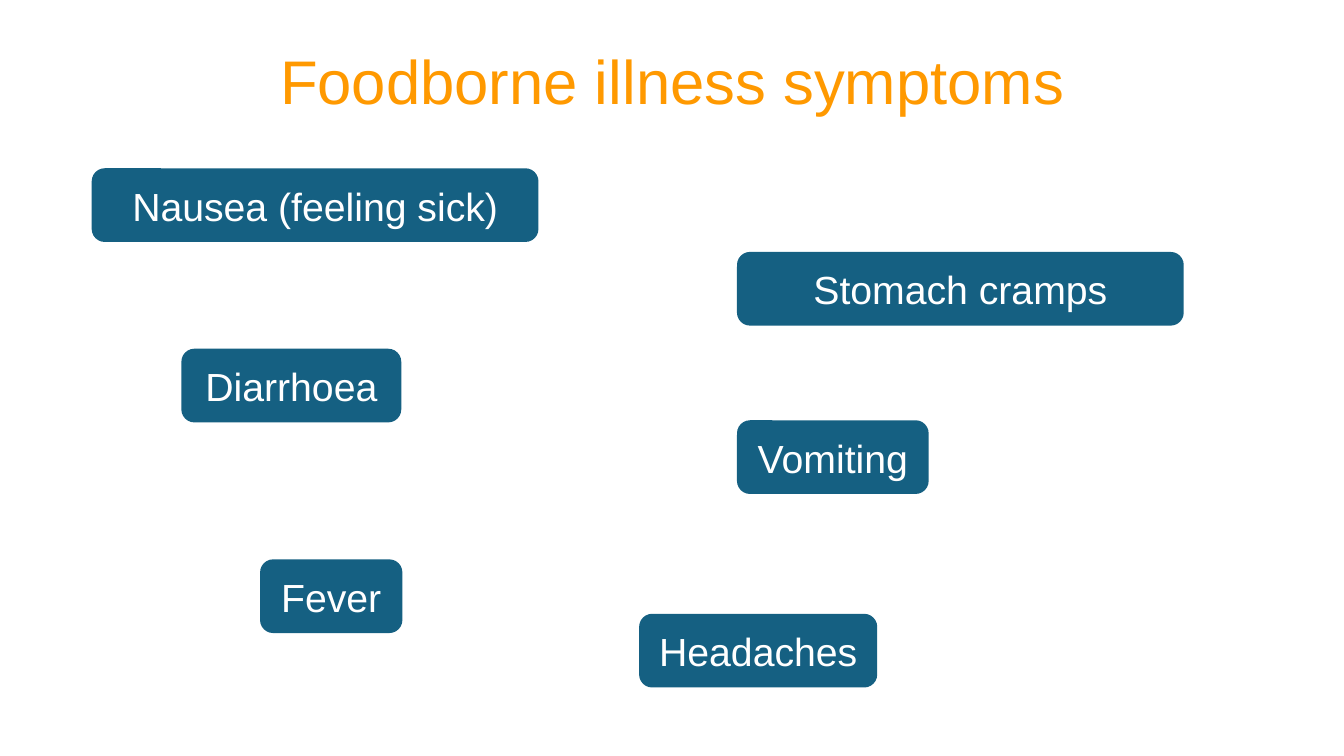
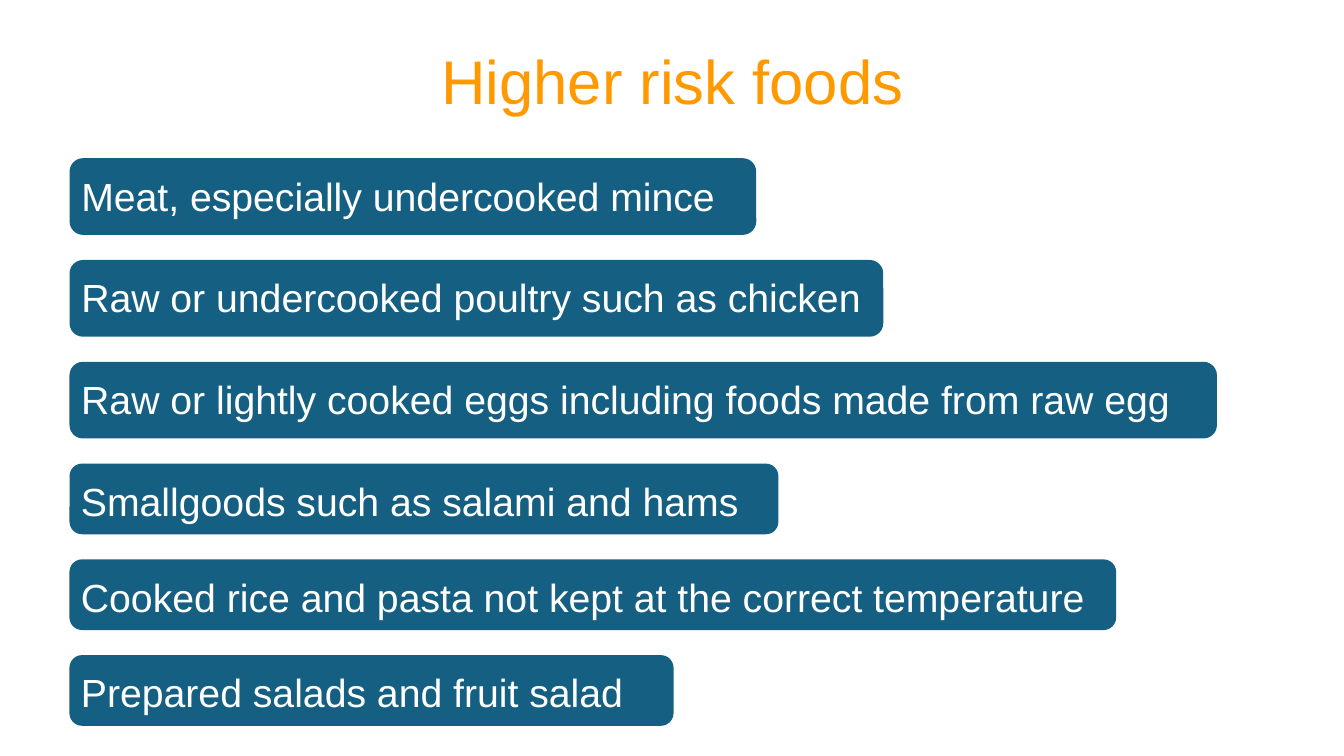
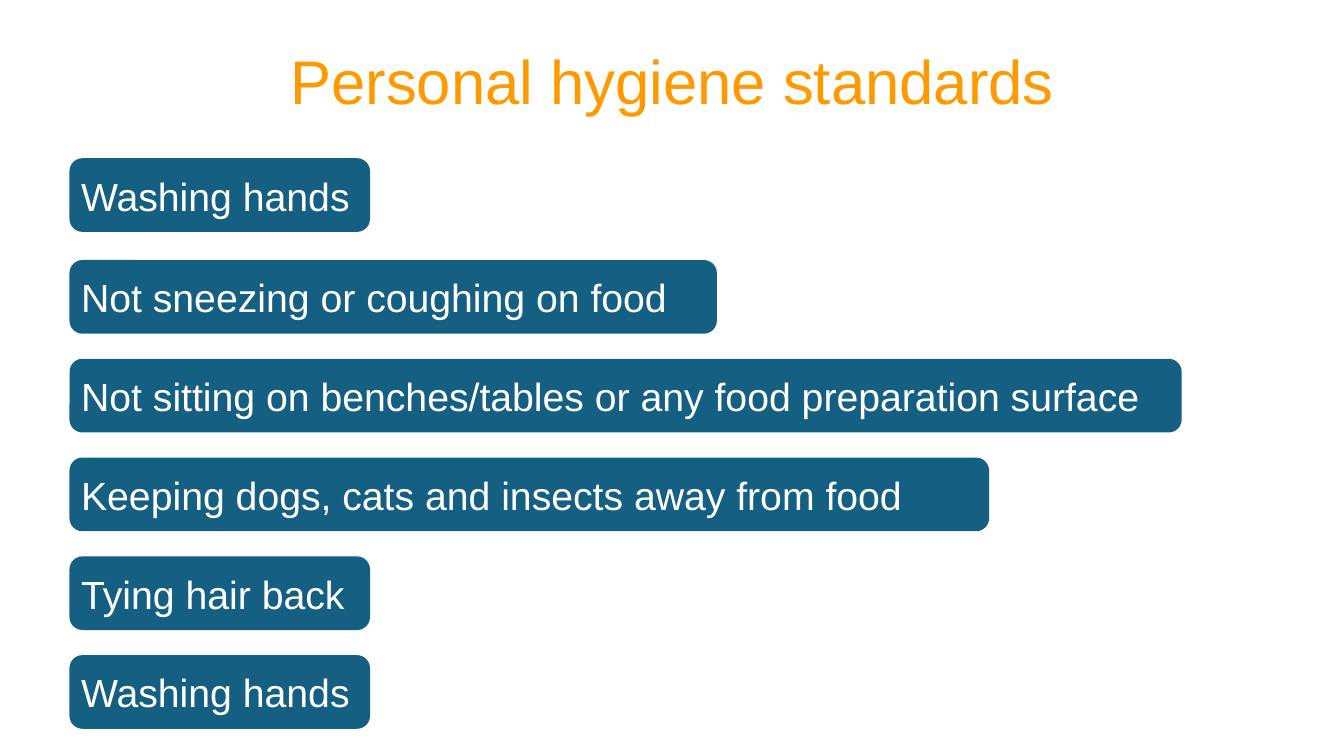
from pptx import Presentation
from pptx import util as u
from pptx.dml.color import RGBColor
from pptx.enum import shapes, text

ORANGE = RGBColor(0xFF, 0x99, 0x00)
TEAL = RGBColor(0x15, 0x60, 0x82)
WHITE = RGBColor(0xFF, 0xFF, 0xFF)
FONT = "Arial"

SLIDE_SIZE = (13.33, 7.5)
TITLE_BOX = (0.92, 0.11, 11.5, 1.45)
TITLE_ONLY = 5
LABEL_HEIGHT = 0.71
LIST_LEFT, LIST_TOP = 0.7, 1.58
LIST_GAP = 0.27

SYMPTOMS = [
    ("Nausea (feeling sick)", 0.92, 1.68, 4.41),
    ("Stomach cramps", 7.32, 2.51, 4.41),
    ("Diarrhoea", 1.81, 3.47, 2.16),
    ("Vomiting", 7.32, 4.18, 1.88),
    ("Fever", 2.59, 5.56, 1.39),
    ("Headaches", 6.35, 6.1, 2.34),
]
ANIMAL_FOODS = [
    ("Meat, especially undercooked mince", 6.79),
    ("Raw or undercooked poultry such as chicken", 8.05),
    ("Raw or lightly cooked eggs including foods made from raw egg", 11.36),
]
PREPARED_FOODS = [
    ("Smallgoods such as salami and hams", 7.01),
    ("Cooked rice and pasta not kept at the correct temperature", 10.36),
    ("Prepared salads and fruit salad", 5.97),
]
HYGIENE_STANDARDS = [
    ("Washing hands", 2.96),
    ("Not sneezing or coughing on food", 6.4),
    ("Not sitting on benches/tables or any food preparation surface", 11.01),
    ("Keeping dogs, cats and insects away from food", 9.1),
    ("Tying hair back", 2.96),
    ("Washing hands", 2.96),
]


def style_text(frame, size, color, align):
    para = frame.paragraphs[0]
    para.alignment = align
    font = para.runs[0].font
    font.name, font.size = FONT, u.Pt(size)
    font.color.rgb = color
    return para


def add_page(deck, heading):
    page = deck.slides.add_slide(deck.slide_layouts[TITLE_ONLY])
    title = page.shapes.title
    title.left, title.top, title.width, title.height = map(u.Inches, TITLE_BOX)
    frame = title.text_frame
    frame.text = heading
    frame.vertical_anchor = text.MSO_ANCHOR.MIDDLE
    para = style_text(frame, 44, ORANGE, text.PP_ALIGN.CENTER)
    para.line_spacing = 0.9
    return page


def add_label(page, words, box, align):
    label = page.shapes.add_shape(
        shapes.MSO_SHAPE.ROUNDED_RECTANGLE, *map(u.Inches, box))
    label.shadow.inherit = False
    label.fill.solid()
    label.fill.fore_color.rgb = TEAL
    label.line.color.rgb = TEAL
    label.line.width = u.Pt(1.5)
    frame = label.text_frame
    frame.word_wrap = True
    frame.vertical_anchor = text.MSO_ANCHOR.TOP
    frame.margin_left = frame.margin_right = u.Inches(0.07)
    frame.margin_top = u.Inches(0.09)
    frame.text = words
    style_text(frame, 28, WHITE, align)


def add_scattered_labels(page, labels):
    for words, left, top, width in labels:
        add_label(page, words, (left, top, width, LABEL_HEIGHT),
                  text.PP_ALIGN.CENTER)


def add_label_list(page, top, height, rows, gap=LIST_GAP):
    """Stack left-aligned labels and return the top of the next row."""
    for words, width in rows:
        add_label(page, words, (LIST_LEFT, top, width, height),
                  text.PP_ALIGN.LEFT)
        top += height + gap
    return top


def main():
    deck = Presentation()
    deck.slide_width, deck.slide_height = map(u.Inches, SLIDE_SIZE)

    page = add_page(deck, "Foodborne illness symptoms")
    add_scattered_labels(page, SYMPTOMS)

    page = add_page(deck, "Higher risk foods")
    top = add_label_list(page, LIST_TOP, 0.74, ANIMAL_FOODS)
    add_label_list(page, top, 0.68, PREPARED_FOODS)

    page = add_page(deck, "Personal hygiene standards")
    top = add_label_list(page, LIST_TOP, LABEL_HEIGHT,
                         HYGIENE_STANDARDS[:1], gap=0.3)
    add_label_list(page, top, LABEL_HEIGHT, HYGIENE_STANDARDS[1:])

    deck.save("out.pptx")


if __name__ == "__main__":
    main()
